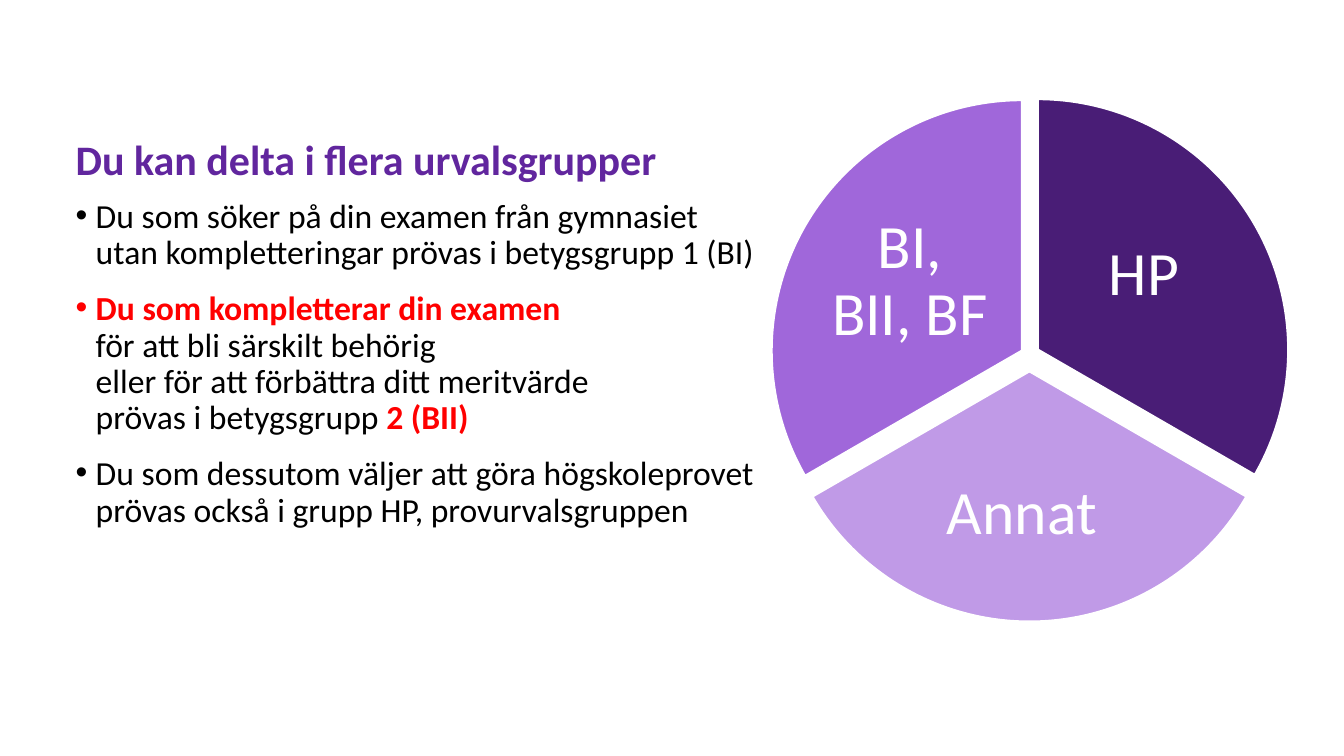
"""Build the slide on selection groups with a three-part pie."""
from lxml.etree import SubElement
from pptx import Presentation
from pptx.dml.color import RGBColor
from pptx.enum.shapes import MSO_SHAPE as Shape
from pptx.enum.text import MSO_ANCHOR as Anchor, PP_ALIGN as Align
from pptx.oxml.ns import qn
from pptx.util import Inches, Pt

BLACK = RGBColor(0x00, 0x00, 0x00)
WHITE = RGBColor(0xFF, 0xFF, 0xFF)
RED = RGBColor(0xFF, 0x00, 0x00)
TITLE = RGBColor(0x61, 0x26, 0x9E)
DARK = RGBColor(0x49, 0x1D, 0x76)
LIGHT = RGBColor(0xC0, 0x9A, 0xE7)
MID = RGBColor(0xA0, 0x67, 0xDA)

deck = Presentation()
deck.slide_width, deck.slide_height = Inches(13.33), Inches(7.5)
slide = deck.slides.add_slide(deck.slide_layouts[6])


def add_box(left, top, width, height, inset, anchor):
    box = slide.shapes.add_textbox(Inches(left), Inches(top), Inches(width), Inches(height))
    frame = box.text_frame
    frame.word_wrap = True
    frame.vertical_anchor = anchor
    frame.margin_left = frame.margin_right = Inches(inset)
    frame.margin_top = frame.margin_bottom = Inches(inset)
    return frame


def add_run(para, text, size, color, bold=False):
    run = para.add_run()
    run.text = text
    run.font.name = "Calibri"
    run.font.size = Pt(size)
    run.font.bold = bold
    run.font.color.rgb = color


points = [
    [[("Du som söker på din examen från gymnasiet", BLACK)],
     [("utan kompletteringar prövas i betygsgrupp 1 (BI)", BLACK)]],
    [[("Du som kompletterar din examen", RED)],
     [("för att bli särskilt behörig", BLACK)],
     [("eller för att förbättra ditt meritvärde", BLACK)],
     [("prövas i betygsgrupp ", BLACK), ("2 (BII)", RED)]],
    [[("Du som dessutom väljer att göra högskoleprovet", BLACK)],
     [("prövas också i grupp HP, provurvalsgruppen", BLACK)]],
]
body = add_box(0.75, 1.97, 10.1, 4.96, 0, Anchor.TOP)
for i, lines in enumerate(points):
    para = body.add_paragraph() if i else body.paragraphs[0]
    para.line_spacing = Pt(26)
    if i:
        para.space_before = Pt(14)
    props = para._p.get_or_add_pPr()
    props.set("marL", str(Inches(0.2)))
    props.set("indent", str(-Inches(0.2)))
    SubElement(props, qn("a:buFont"), typeface="Arial")
    SubElement(props, qn("a:buChar"), char="•")
    for j, line in enumerate(lines):
        if j:
            para.add_line_break()
        for text, color in line:
            add_run(para, text, 24, color, color == RED)

title = add_box(0.75, 1.25, 11.83, 0.57, 0, Anchor.BOTTOM)
add_run(title.paragraphs[0], "Du kan delta i flera urvalsgrupper", 30, TITLE, True)

slices = [
    ("HP", DARK, (7.8, 0.98), (162, 18), (10.5, 1.9, 1.69, 1.66)),
    ("Annat ", LIGHT, (7.72, 1.19), (18, 90), (9.08, 4.33, 2.25, 1.54)),
    ("BI, BII, BF", MID, (7.65, 0.99), (90, 162), (8.18, 1.97, 1.69, 1.66)),
]
side = Inches(4.98)
for text, color, (left, top), (start, end), area in slices:
    pie = slide.shapes.add_shape(Shape.PIE, Inches(left), Inches(top), side, side)
    pie.adjustments[0] = start
    pie.adjustments[1] = end
    pie.shadow.inherit = False
    pie.fill.solid()
    pie.fill.fore_color.rgb = color
    pie.line.color.rgb = WHITE
    pie.line.width = Pt(2)
    para = add_box(*area, 0.06, Anchor.MIDDLE).paragraphs[0]
    para.alignment = Align.CENTER
    para.line_spacing = 0.9
    add_run(para, text, 44, WHITE)

deck.save("out.pptx")
